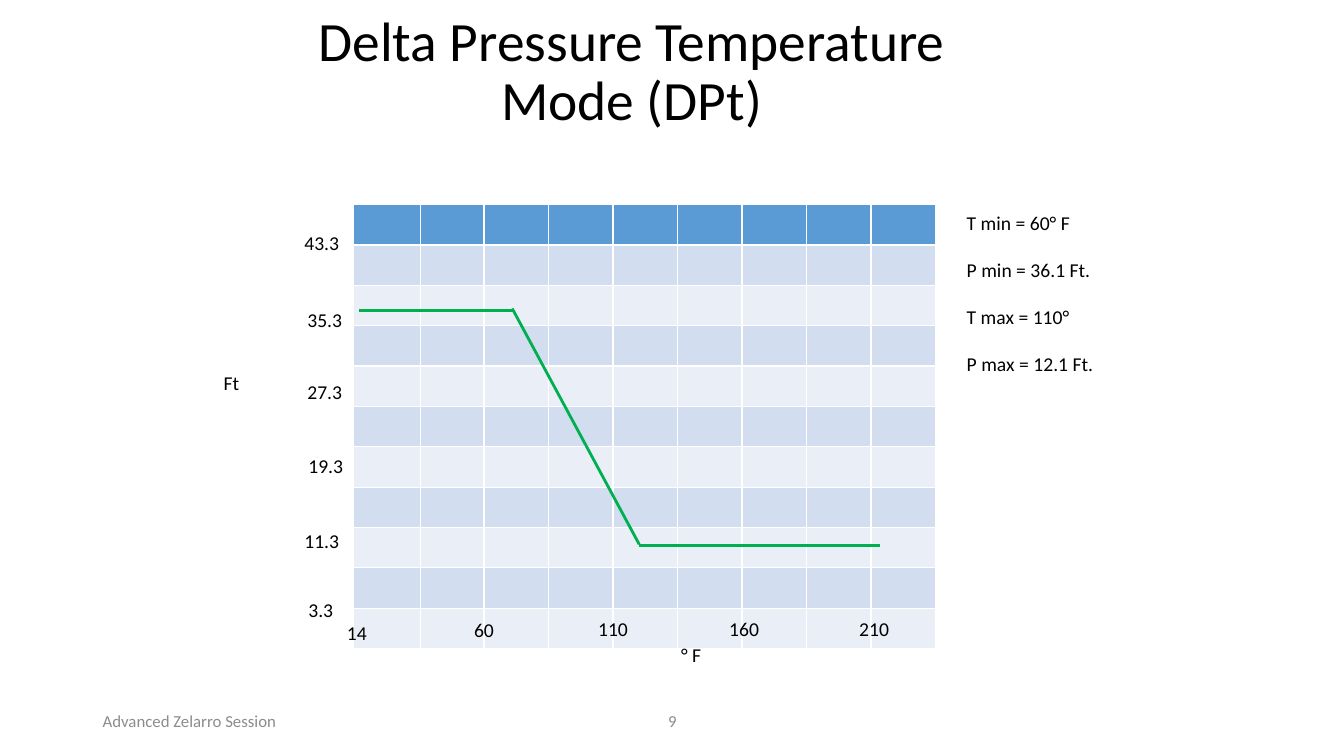
import pptx
import pptx.util
import pptx.dml.color
import pptx.enum.shapes
import pptx.enum.text
import pptx.oxml
import pptx.oxml.ns
import lxml.etree

Inches = pptx.util.Inches
Pt = pptx.util.Pt
ALIGN = pptx.enum.text.PP_ALIGN
ANCHOR = pptx.enum.text.MSO_ANCHOR
COLORS = {
    "text": "000000",
    "footer": "8C8C8C",
    "header": "5B9BD5",
    "odd": "D2DEEF",
    "even": "EAEFF7",
    "grid": "FFFFFF",
    "curve": "00B050",
}


class SlideBuilder:
    """Holds the style and the current slide, and draws each kind of element."""

    font = "Calibri"

    def __init__(self, slide):
        self.s = slide

    def color(self, name):
        return pptx.dml.color.RGBColor.from_string(COLORS[name])

    def text(self, box, lines, size=14, color="text", align=ALIGN.LEFT,
             anchor=ANCHOR.TOP, spacing=None, gap=0):
        sp = self.s.shapes.add_textbox(*map(Inches, box))
        tf = sp.text_frame
        tf.word_wrap = True
        tf.vertical_anchor = anchor
        for i, line in enumerate(lines):
            p = tf.add_paragraph() if i else tf.paragraphs[0]
            p.alignment = align
            if spacing:
                p.line_spacing = spacing
            if i and gap:
                p.space_before = Pt(gap)
            r = p.add_run()
            r.text = line
            r.font.name = self.font
            r.font.size = Pt(size)
            r.font.color.rgb = self.color(color)

    def border(self, side, width=1):
        ns = pptx.oxml.ns.nsdecls("a")
        return pptx.oxml.parse_xml(
            f'<a:{side} {ns} w="{Pt(width)}"><a:solidFill>'
            f'<a:srgbClr val="{COLORS["grid"]}"/></a:solidFill></a:{side}>')

    def grid(self, box, widths, rows, row_height):
        frame = self.s.shapes.add_table(rows, len(widths), *map(Inches, box))
        table = frame.table
        for column, width in zip(table.columns, widths):
            column.width = Inches(width)
        for i, row in enumerate(table.rows):
            row.height = Inches(row_height)
            fill = "header" if i == 0 else "odd" if i % 2 else "even"
            for cell in row.cells:
                cell.fill.solid()
                cell.fill.fore_color.rgb = self.color(fill)
                props = cell._tc.get_or_add_tcPr()
                for n, side in enumerate(("lnL", "lnR", "lnT", "lnB")):
                    props.insert(n, self.border(side))
        frame.height = Inches(box[3])

    def line(self, start, end, color="curve", width=2):
        sp = self.s.shapes.add_connector(
            pptx.enum.shapes.MSO_CONNECTOR.STRAIGHT,
            *map(Inches, (*start, *end)))
        sp.line.color.rgb = self.color(color)
        sp.line.width = Pt(width)
        lxml.etree.SubElement(sp._element.spPr, pptx.oxml.ns.qn("a:effectLst"))


def main():
    prs = pptx.Presentation()
    prs.slide_width, prs.slide_height = Inches(13.33), Inches(7.5)
    b = SlideBuilder(prs.slides.add_slide(prs.slide_layouts[6]))

    b.text((2.42, 0.33, 7.69, 0.79), ["Delta Pressure Temperature Mode (DPt)"],
           size=39.6, align=ALIGN.CENTER, anchor=ANCHOR.MIDDLE, spacing=0.9)
    b.grid((3.51, 2.03, 5.8, 4.46), [0.66, 0.63] + [0.64] * 7, 11, 0.33)

    b.text((0.92, 6.95, 3, 0.4), ["Advanced Zelarro Session"], size=12,
           color="footer", anchor=ANCHOR.MIDDLE)
    b.text((4.42, 6.95, 4.5, 0.4), ["9"], size=12, color="footer",
           align=ALIGN.CENTER, anchor=ANCHOR.MIDDLE)

    b.text((6.39, 6.33, 0.93, 0.34), ["° F"], align=ALIGN.CENTER)
    b.text((2.12, 3.63, 0.5, 0.34), ["Ft"])
    for label, x, y in [("43.3", 2.92, 2.24), ("35.3", 2.95, 3.01),
                        ("27.3", 2.95, 3.72), ("19.3", 2.96, 4.45),
                        ("11.3", 2.92, 5.2), ("3.3", 2.96, 5.88)]:
        b.text((x, y, 0.55, 0.34), [label])
    for label, x, y in [("14", 3.18, 6.11), ("60", 4.44, 6.08),
                        ("110", 5.72, 6.07), ("160", 7.02, 6.07),
                        ("210", 8.31, 6.07)]:
        b.text((x, y, 0.72, 0.34), [label], align=ALIGN.CENTER)

    b.line((3.56, 3.08), (5.1, 3.08))
    b.line((5.08, 3.06), (6.34, 5.4))
    b.line((6.34, 5.41), (8.73, 5.41))

    b.text((9.49, 2.04, 1.77, 1.75),
           ["T min = 60° F", "P min = 36.1 Ft.", "T max = 110°",
            "P max = 12.1 Ft."], gap=16.8)

    prs.save("out.pptx")


if __name__ == "__main__":
    main()
